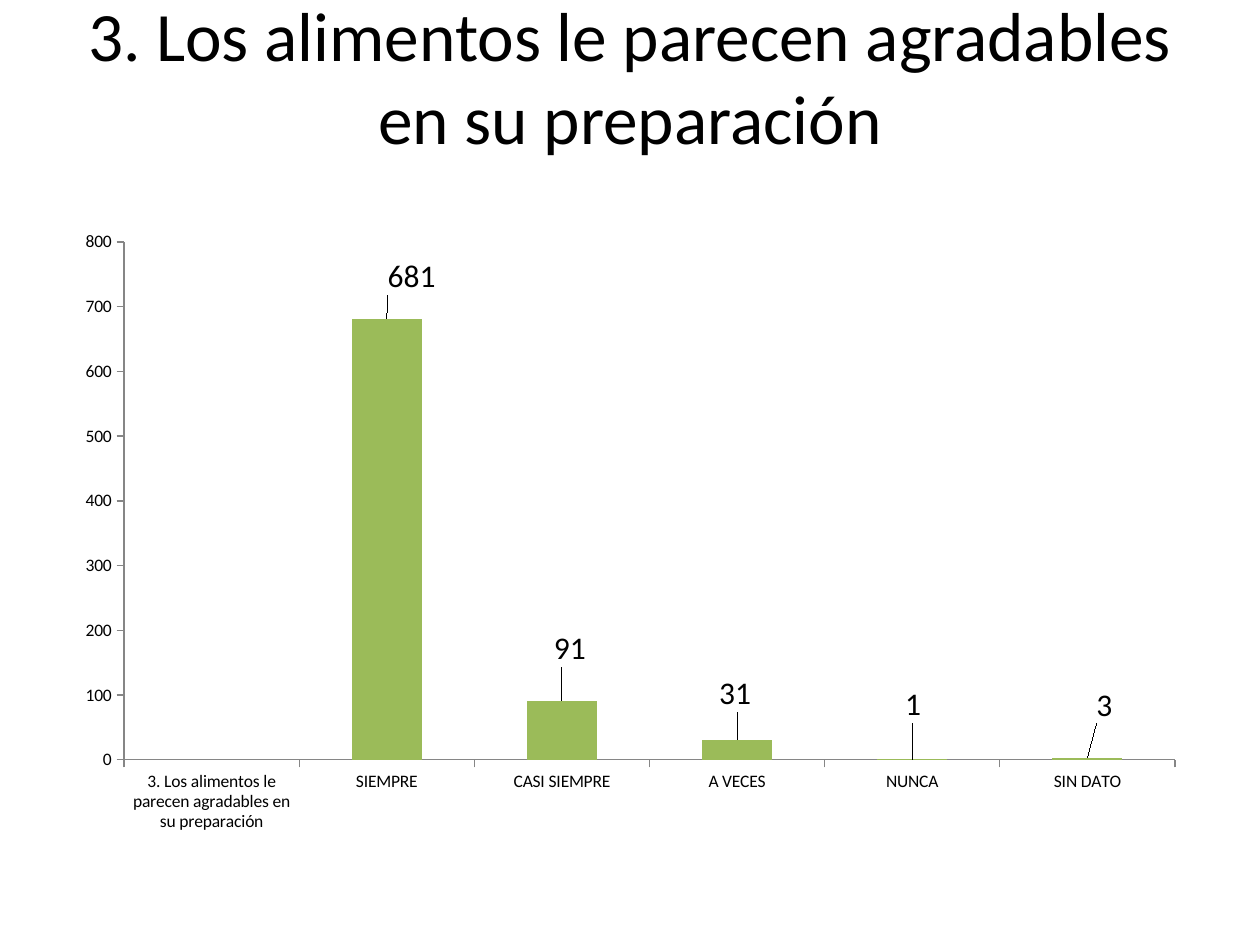
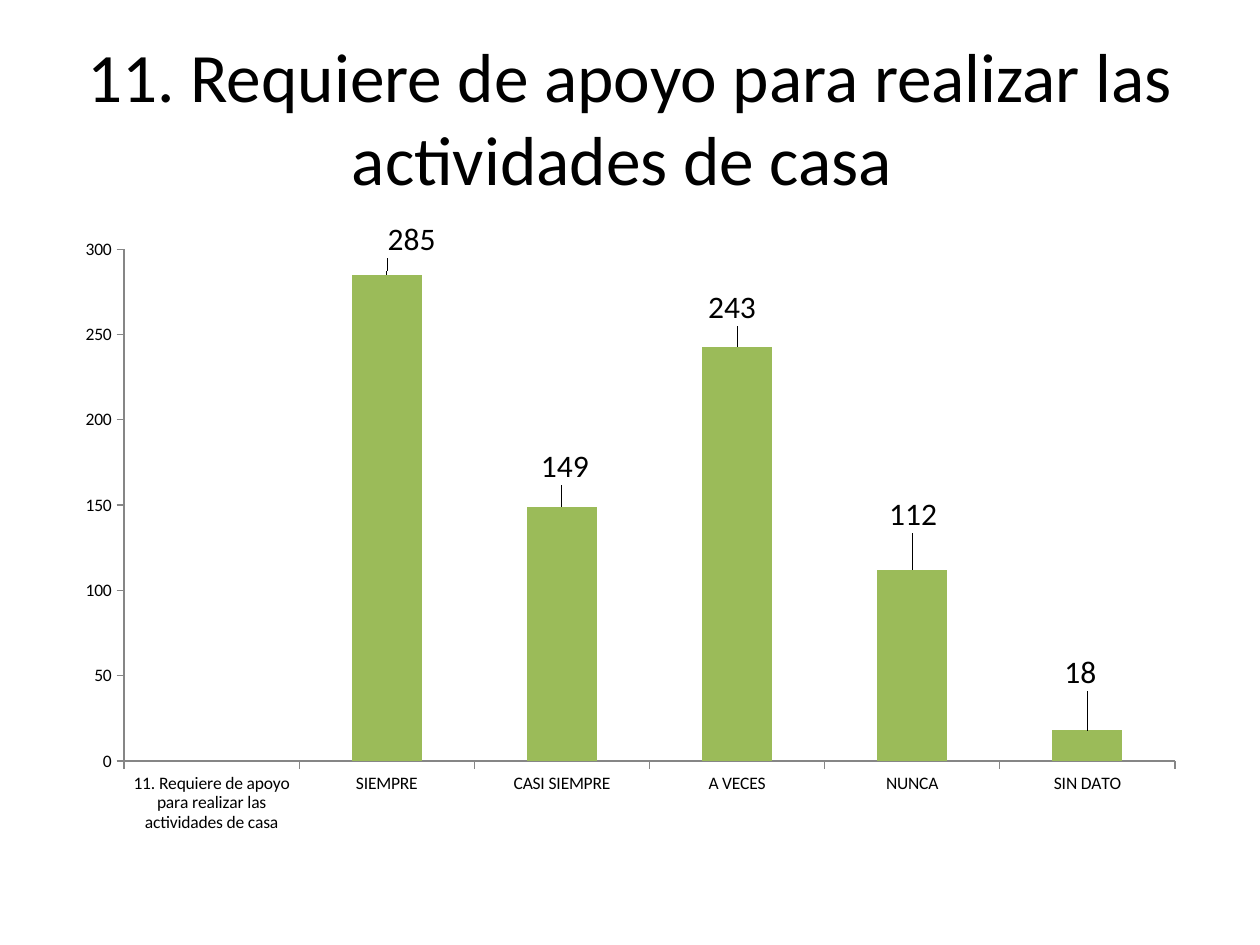
"""Two survey slides, each with a question and a column chart of its answers."""
from lxml import etree
from pptx import Presentation
from pptx import util as u
from pptx.chart.data import CategoryChartData
from pptx.dml.color import RGBColor
from pptx.enum import chart as charts, text
from pptx.oxml.ns import qn

BLACK = RGBColor(0x00, 0x00, 0x00)
GREEN = RGBColor(0x9B, 0xBB, 0x59)
GREY = RGBColor(0x86, 0x86, 0x86)
FONT = "Calibri"
CHART_LEFT, CHART_TOP, CHART_WIDTH, CHART_HEIGHT = 63, 220, 1134, 624
PLOT_LEFT, PLOT_WIDTH = 124, 1051
ANSWERS = ["SIEMPRE", "CASI SIEMPRE", "A VECES", "NUNCA", "SIN DATO"]

QUESTIONS = [
    dict(title="3. Los alimentos le parecen agradables en su preparación",
         bottom_inset=88, values=[681, 91, 31, 1, 3], top=800, step=100,
         plot_top=242, plot_bottom=760,
         shifts=[(25, -19), (8, -29), (-2, -22), (1, -31), (17, -29)]),
    dict(title="11. Requiere de apoyo para realizar las actividades de casa ",
         bottom_inset=6, values=[285, 149, 243, 112, 18], top=300, step=50,
         plot_top=248, plot_bottom=761,
         shifts=[(25, -12), (3, -17), (-5, -15), (1, -32), (-7, -34)]),
]


def px(length):
    return u.Emu(round(length * 914400 / 126))


def add_layout(parent, index, **settings):
    for old in parent.findall(qn("c:layout")):
        parent.remove(old)
    layout = etree.Element(qn("c:layout"))
    manual = etree.SubElement(layout, qn("c:manualLayout"))
    for name, value in settings.items():
        etree.SubElement(manual, qn(f"c:{name}")).set("val", str(value))
    parent.insert(index, layout)


deck = Presentation()
deck.slide_width, deck.slide_height = px(1260), px(945)

for question in QUESTIONS:
    page = deck.slides.add_slide(deck.slide_layouts[6])

    box = page.shapes.add_textbox(px(63), px(38), px(1134), px(157))
    frame = box.text_frame
    frame.word_wrap = True
    frame.vertical_anchor = text.MSO_ANCHOR.MIDDLE
    frame.margin_bottom = px(question["bottom_inset"])
    frame.text = question["title"]
    para = frame.paragraphs[0]
    para.alignment = text.PP_ALIGN.CENTER
    span = para.runs[0]
    span.font.name, span.font.size = FONT, u.Pt(39.6)
    span.font.color.rgb = BLACK

    data = CategoryChartData()
    data.categories = [question["title"].strip()] + ANSWERS
    data.add_series("Series 1", [None] + question["values"])
    chart = page.shapes.add_chart(
        charts.XL_CHART_TYPE.COLUMN_CLUSTERED, px(CHART_LEFT), px(CHART_TOP),
        px(CHART_WIDTH), px(CHART_HEIGHT), data).chart
    chart.has_legend = chart.has_title = False
    chart.font.name, chart.font.size = FONT, u.Pt(10)
    chart.font.color.rgb = BLACK

    for axis in (chart.category_axis, chart.value_axis):
        axis.has_major_gridlines = False
        axis.major_tick_mark = charts.XL_TICK_MARK.OUTSIDE
        axis.minor_tick_mark = charts.XL_TICK_MARK.NONE
        axis.format.line.color.rgb = GREY
        axis.format.line.width = u.Pt(0.75)
    chart.value_axis.minimum_scale = 0
    chart.value_axis.maximum_scale = question["top"]
    chart.value_axis.major_unit = question["step"]

    plot = chart.plots[0]
    plot.gap_width = 150
    plot.vary_by_categories = False
    series = plot.series[0]
    series.format.fill.solid()
    series.format.fill.fore_color.rgb = GREEN

    for position in range(1, len(ANSWERS) + 1):
        label = series.points[position].data_label
        label.font.name, label.font.size = FONT, u.Pt(18)
        label.font.color.rgb = BLACK
        label.position = charts.XL_LABEL_POSITION.OUTSIDE_END
    labels = series._element.findall(f"{qn('c:dLbls')}/{qn('c:dLbl')}")
    for label, (right, down) in zip(labels, question["shifts"]):
        add_layout(label, 1, x=right / CHART_WIDTH, y=down / CHART_HEIGHT)

    plot_area = chart._chartSpace.find(f"{qn('c:chart')}/{qn('c:plotArea')}")
    add_layout(
        plot_area, 0, layoutTarget="inner", xMode="edge", yMode="edge",
        x=(PLOT_LEFT - CHART_LEFT) / CHART_WIDTH,
        y=(question["plot_top"] - CHART_TOP) / CHART_HEIGHT,
        w=PLOT_WIDTH / CHART_WIDTH,
        h=(question["plot_bottom"] - question["plot_top"]) / CHART_HEIGHT)

deck.save("out.pptx")
